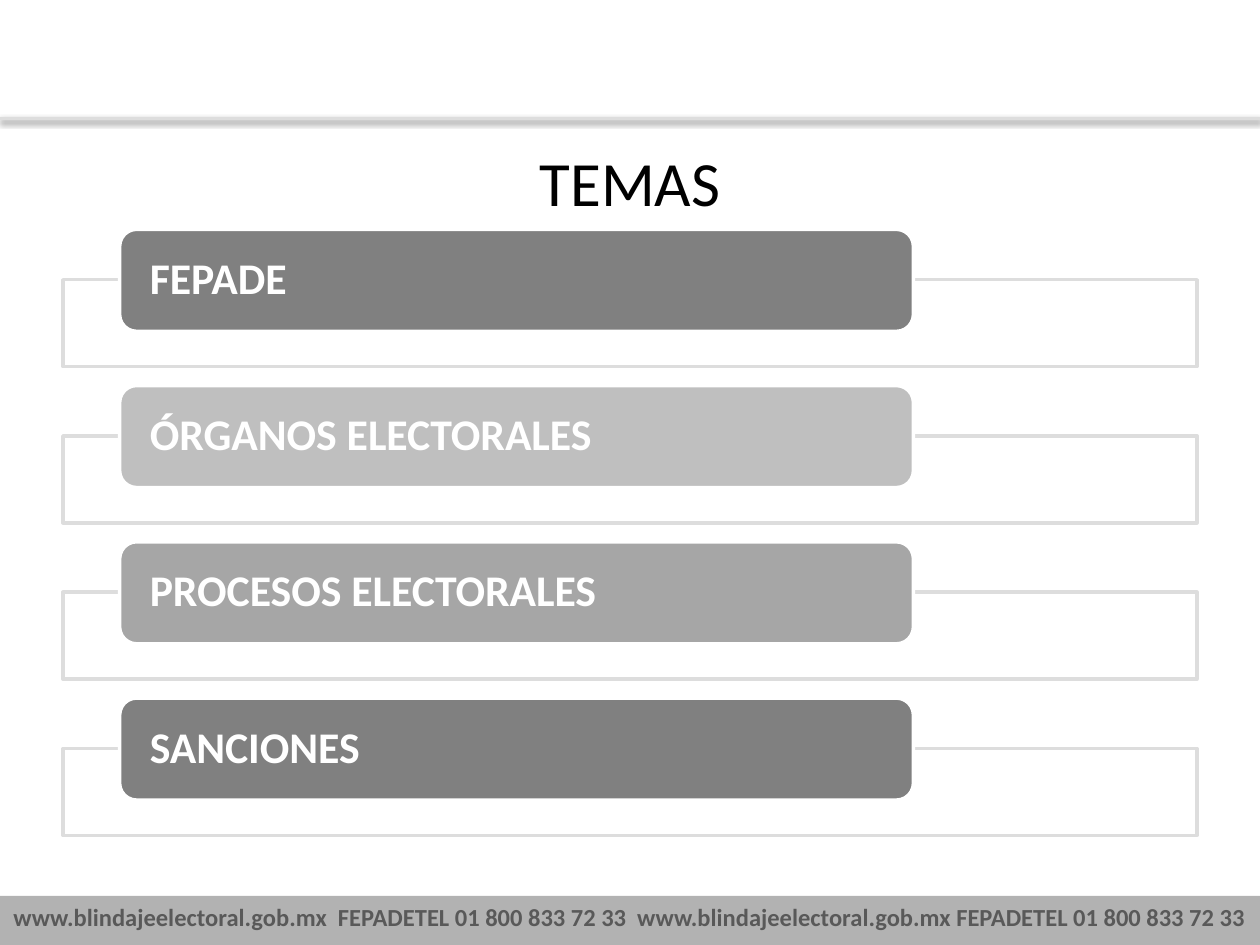
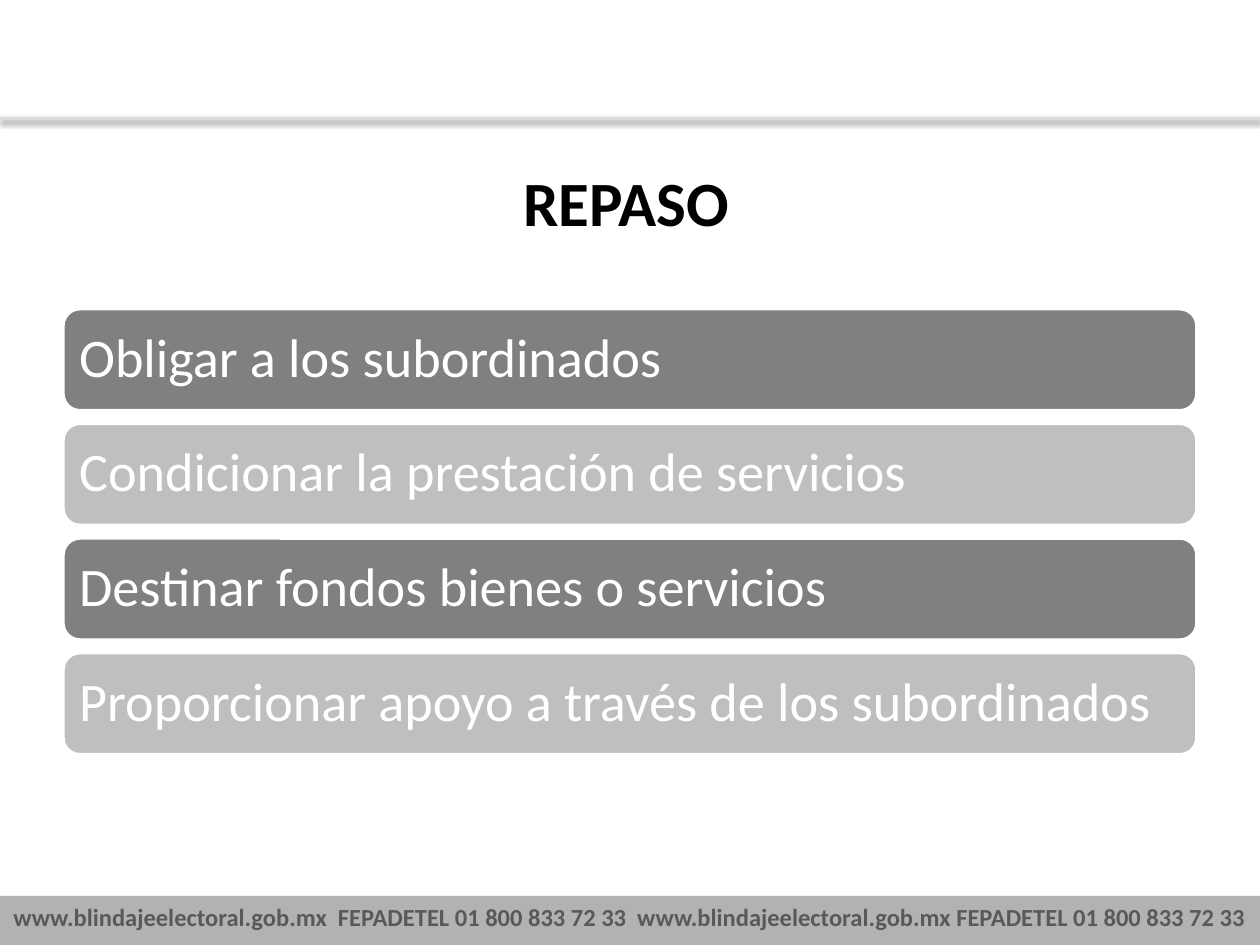
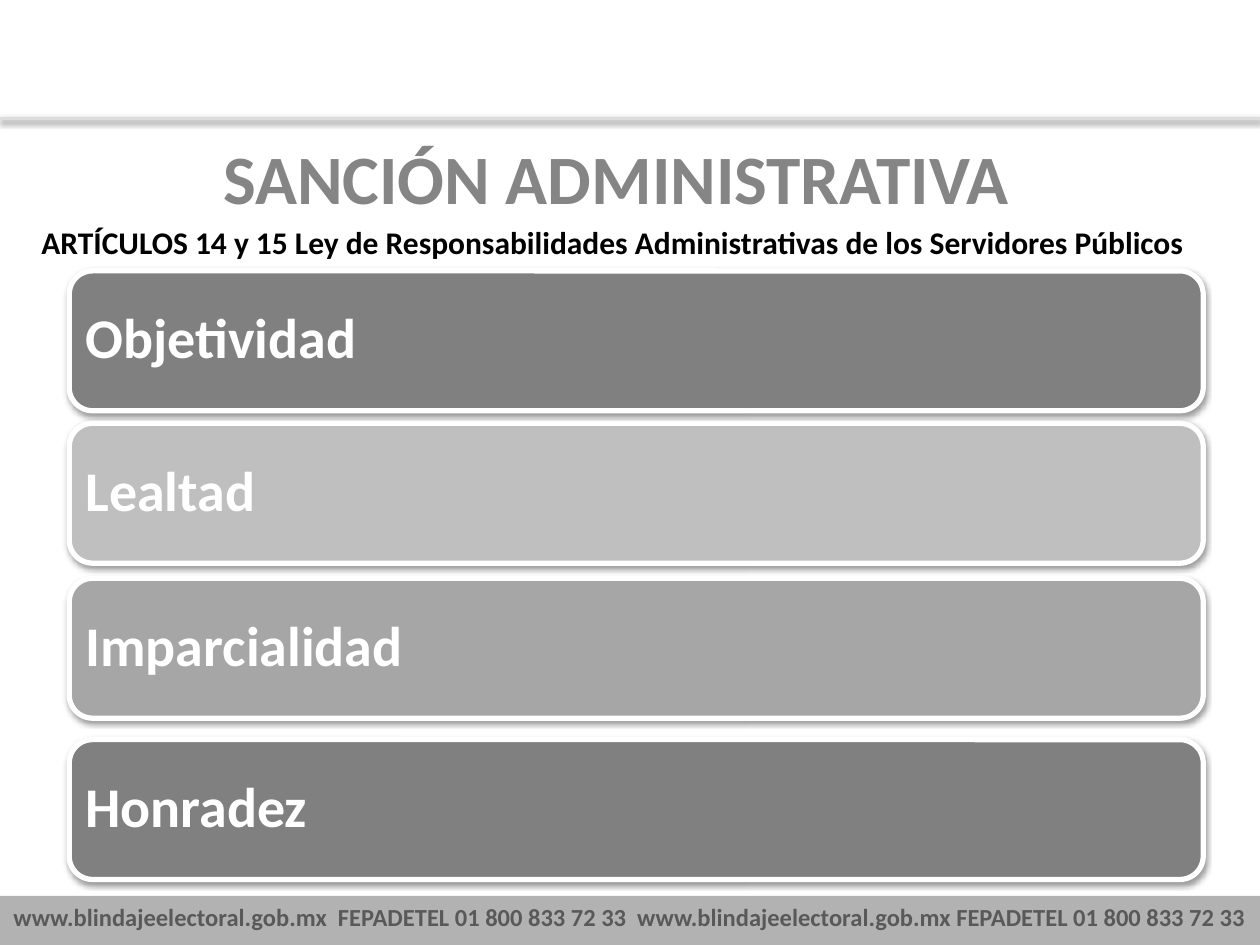
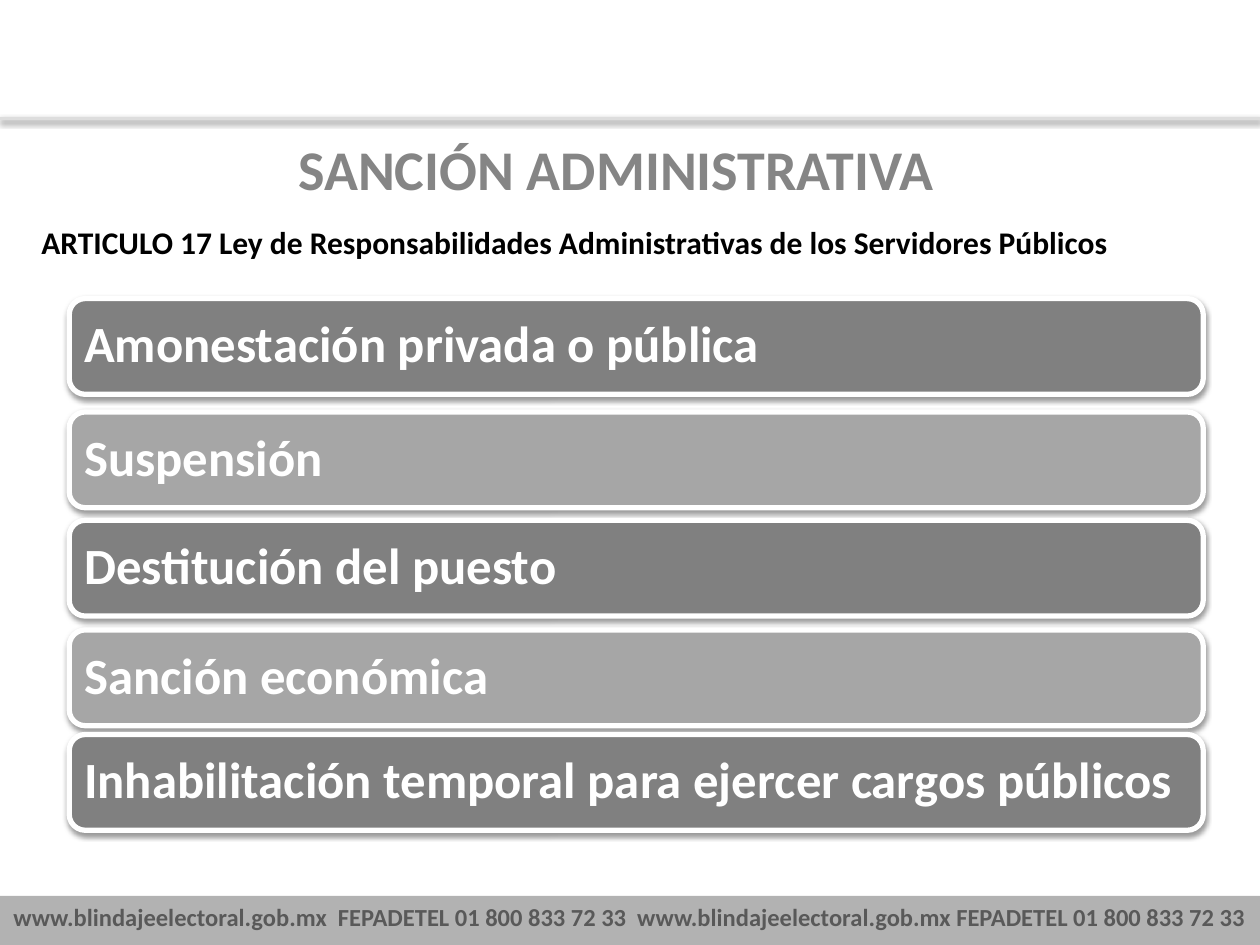
from lxml import etree
from pptx import Presentation
from pptx.dml.color import RGBColor
from pptx.enum.shapes import MSO_CONNECTOR, MSO_SHAPE
from pptx.enum.text import MSO_ANCHOR, MSO_AUTO_SIZE, PP_ALIGN
from pptx.oxml.ns import qn
from pptx.util import Inches, Pt

RECTANGLE = MSO_SHAPE.RECTANGLE
ROUNDED = MSO_SHAPE.ROUNDED_RECTANGLE
STRAIGHT = MSO_CONNECTOR.STRAIGHT
TOP, MIDDLE = MSO_ANCHOR.TOP, MSO_ANCHOR.MIDDLE
LEFT, CENTER, JUSTIFY = PP_ALIGN.LEFT, PP_ALIGN.CENTER, PP_ALIGN.JUSTIFY
NO_AUTOFIT = MSO_AUTO_SIZE.NONE

FONT = "Calibri"
BLACK = RGBColor(0, 0, 0)
WHITE = RGBColor(255, 255, 255)
DARK = RGBColor(0x80, 0x80, 0x80)
MEDIUM = RGBColor(0xA6, 0xA6, 0xA6)
LIGHT = RGBColor(0xBF, 0xBF, 0xBF)
RULE = RGBColor(0xDD, 0xDD, 0xDD)
BAND = RGBColor(0xB2, 0xB2, 0xB2)
BAND_TEXT = RGBColor(0x59, 0x59, 0x59)
TITLE_GRAY = RGBColor(0x85, 0x85, 0x85)

SLIDE_WIDTH, SLIDE_HEIGHT = 10, 7.5
RULE_TOP = 0.94
BAND_TOP, BAND_HEIGHT = 7.11, 0.4
SUBTITLE_BOX = (0.23, 1.72, 9.77, 0.71)
FRAME_LEFT, FRAME_WIDTH, FRAME_HEIGHT, FRAME_DROP = 0.5, 9, 0.69, 0.4
ROUNDED_TEXT_INSET = 0.05

FOOTER = ("www.blindajeelectoral.gob.mx  FEPADETEL 01 800 833 72 33  "
          "www.blindajeelectoral.gob.mx FEPADETEL 01 800 833 72 33")


def even_tops(first, step, count):
    return [first + step * index for index in range(count)]


SLIDES = [
    {
        "title": ("TEMAS", (0, 1.09, 10, 0.71), 36, BLACK, False),
        "items": ["FEPADE", "ÓRGANOS ELECTORALES", "PROCESOS ELECTORALES", "SANCIONES"],
        "fills": [DARK, LIGHT, MEDIUM, DARK],
        "tops": even_tops(1.82, 1.24, 4),
        "bar": {"left": 0.95, "width": 6.3, "height": 0.81, "inset": 0.24,
                "size": 25, "bold": True, "framed": True},
    },
    {
        "title": ("REPASO", (0.47, 1.25, 9, 1.25), 36, BLACK, True),
        "items": ["Obligar a los subordinados", "Condicionar la prestación de servicios",
                  "Destinar fondos bienes o servicios",
                  "Proporcionar apoyo a través de los subordinados"],
        "fills": [DARK, LIGHT, DARK, LIGHT],
        "tops": even_tops(2.45, 0.91, 4),
        "bar": {"left": 0.5, "width": 9, "height": 0.81, "inset": 0.13, "size": 31},
    },
    {
        "title": ("SANCIÓN ADMINISTRATIVA", (0.39, 1.02, 9, 1.25), 39.6, TITLE_GRAY, True),
        "subtitle": "ARTÍCULOS 14 y 15 Ley de Responsabilidades Administrativas "
                    "de los Servidores Públicos",
        "items": ["Objetividad", "Lealtad", "Imparcialidad", "Honradez"],
        "fills": [DARK, LIGHT, MEDIUM, DARK],
        "tops": [2.15, 3.36, 4.59, 5.87],
        "bar": {"left": 0.55, "width": 9, "height": 1.11, "inset": 0.13,
                "size": 32, "bold": True, "raised": True},
    },
    {
        "title": ("SANCIÓN ADMINISTRATIVA", (0.39, 1.02, 9, 1.25), 32, TITLE_GRAY, True),
        "subtitle": "ARTICULO 17 Ley de Responsabilidades Administrativas "
                    "de los Servidores Públicos",
        "items": ["Amonestación privada o pública", "Suspensión", "Destitución del puesto",
                  "Sanción económica", "Inhabilitación temporal para ejercer cargos públicos"],
        "fills": [DARK, MEDIUM, DARK, MEDIUM, DARK],
        "tops": [2.37, 3.27, 4.13, 5, 5.83],
        "bar": {"left": 0.55, "width": 9, "height": 0.76, "inset": 0.12,
                "size": 29, "bold": True, "raised": True},
    },
]


def set_effects(shape, raised=False):
    effects = etree.SubElement(shape._element.spPr, qn("a:effectLst"))
    if raised:
        shadow = etree.SubElement(effects, qn("a:outerShdw"), blurRad=str(Pt(3.1)),
                                  dist=str(Pt(1.6)), dir="5400000", rotWithShape="0")
        color = etree.SubElement(shadow, qn("a:srgbClr"), val=str(BLACK))
        etree.SubElement(color, qn("a:alpha"), val="38000")


def write(shape, text, size, color, bold=False, align=LEFT, anchor=TOP):
    text_frame = shape.text_frame
    text_frame.text = text
    text_frame.word_wrap = True
    text_frame.auto_size = NO_AUTOFIT
    text_frame.vertical_anchor = anchor
    paragraph = text_frame.paragraphs[0]
    paragraph.alignment = align
    font = paragraph.runs[0].font
    font.name, font.size, font.bold = FONT, Pt(size), bold
    font.color.rgb = color


def set_margins(shape, side, vertical):
    text_frame = shape.text_frame
    text_frame.margin_left = text_frame.margin_right = Inches(side)
    text_frame.margin_top = text_frame.margin_bottom = Inches(vertical)


def add_block(slide, kind, box, fill, line=None, line_width=2, raised=False):
    shape = slide.shapes.add_shape(kind, *map(Inches, box))
    shape.fill.solid()
    shape.fill.fore_color.rgb = fill
    if line is None:
        shape.line.fill.background()
    else:
        shape.line.color.rgb = line
        shape.line.width = Pt(line_width)
    set_effects(shape, raised)
    return shape


def add_shared_parts(slide):
    rule = slide.shapes.add_connector(STRAIGHT, 0, Inches(RULE_TOP),
                                      Inches(SLIDE_WIDTH), Inches(RULE_TOP))
    rule.line.color.rgb = RULE
    rule.line.width = Pt(2)
    set_effects(rule, raised=True)
    band = add_block(slide, RECTANGLE, (0, BAND_TOP, SLIDE_WIDTH, BAND_HEIGHT), BAND)
    write(band, FOOTER, 14, BAND_TEXT, True, CENTER)
    set_margins(band, 0, 0.05)
    layout_tree = slide.slide_layout.shapes._spTree
    for part in (rule, band):
        layout_tree.append(part._element)


def add_title(slide, text, box, size, color, bold):
    title = slide.shapes.title
    title.left, title.top, title.width, title.height = map(Inches, box)
    write(title, text, size, color, bold, CENTER)


def add_frame(slide, bar_top):
    box = (FRAME_LEFT, bar_top + FRAME_DROP, FRAME_WIDTH, FRAME_HEIGHT)
    frame = add_block(slide, RECTANGLE, box, WHITE, RULE)
    color = frame._element.spPr.find(qn("a:solidFill")).find(qn("a:srgbClr"))
    etree.SubElement(color, qn("a:alpha"), val="90000")


def add_bar(slide, text, fill, top, left, width, height, inset, size,
            bold=False, framed=False, raised=False):
    if framed:
        add_frame(slide, top)
    bar = add_block(slide, ROUNDED, (left, top, width, height), fill, WHITE,
                    3 if raised else 2, raised)
    write(bar, text, size, WHITE, bold, anchor=MIDDLE)
    set_margins(bar, inset - ROUNDED_TEXT_INSET * height, 0)
    bar.text_frame.paragraphs[0].line_spacing = 0.9


def main():
    presentation = Presentation()
    presentation.slide_width = Inches(SLIDE_WIDTH)
    presentation.slide_height = Inches(SLIDE_HEIGHT)
    layout = presentation.slide_layouts.get_by_name("Title Only")
    for number, content in enumerate(SLIDES):
        slide = presentation.slides.add_slide(layout)
        if number == 0:
            add_shared_parts(slide)
        add_title(slide, *content["title"])
        for text, fill, top in zip(content["items"], content["fills"], content["tops"]):
            add_bar(slide, text, fill, top, **content["bar"])
        if "subtitle" in content:
            subtitle = slide.shapes.add_textbox(*map(Inches, SUBTITLE_BOX))
            write(subtitle, content["subtitle"], 18, BLACK, True, JUSTIFY)
    presentation.save("out.pptx")


if __name__ == "__main__":
    main()
